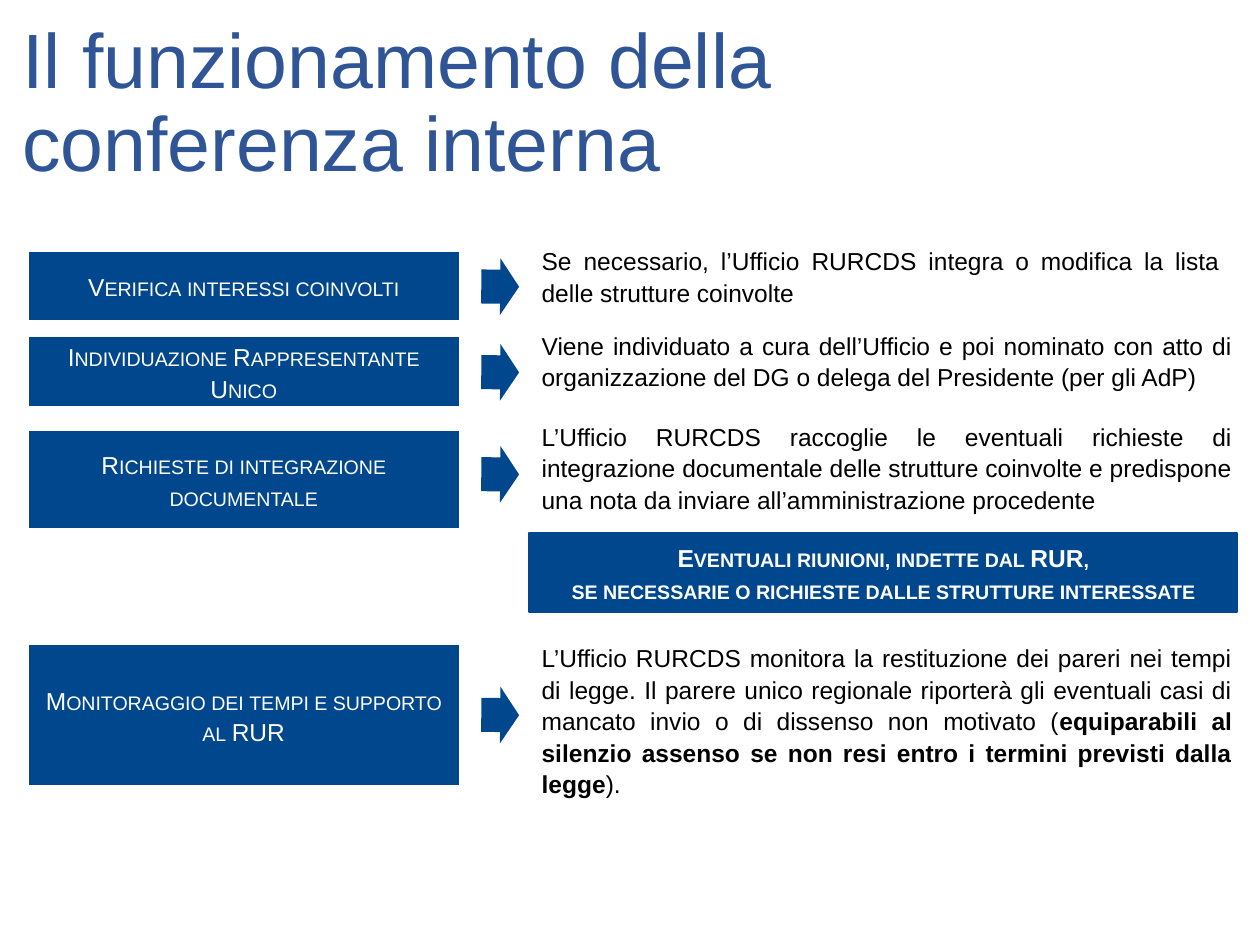
import pptx
import pptx.util
import pptx.dml.color
import pptx.enum.shapes
import pptx.enum.text

Inches = pptx.util.Inches
Pt = pptx.util.Pt
Shape = pptx.enum.shapes.MSO_SHAPE
Align = pptx.enum.text.PP_ALIGN
Anchor = pptx.enum.text.MSO_ANCHOR

BLUE = "01478D"
WHITE = "FFFFFF"
BLACK = "000000"
TITLE_BLUE = "2F5597"

STEPS = [
    ((1.99, 0.56), "Verifica interessi coinvolti", 2.05, (1.89, 0.67, 0.1),
     [("Se necessario, l’Ufficio RURCDS integra o modifica la lista delle strutture coinvolte", False)]),
    ((2.67, 0.56), "Individuazione Rappresentante Unico", 2.73, (2.56, 0.67, 0),
     [("Viene individuato a cura dell’Ufficio e poi nominato con atto di organizzazione "
       "del DG o delega del Presidente (per gli AdP)", False)]),
    ((3.41, 0.79), "Richieste di integrazione documentale", 3.54, (3.28, 0.98, 0),
     [("L’Ufficio RURCDS raccoglie le eventuali richieste di integrazione documentale delle "
       "strutture coinvolte e predispone una nota da inviare all’amministrazione procedente", False)]),
    ((5.11, 1.13), "Monitoraggio dei tempi e supporto al RUR", 5.45, (5.04, 1.65, 0),
     [("L’Ufficio RURCDS monitora la restituzione dei pareri nei tempi di legge. Il parere unico "
       "regionale riporterà gli eventuali casi di mancato invio o di dissenso non motivato (", False),
      ("equiparabili al silenzio assenso se non resi entro i termini previsti dalla legge", True),
      (").", False)]),
]


def color(value):
    return pptx.dml.color.RGBColor.from_string(value)


def set_frame(box, anchor, left, top, right, bottom):
    frame = box.text_frame
    frame.word_wrap = True
    frame.vertical_anchor = anchor
    frame.margin_left, frame.margin_top = Inches(left), Inches(top)
    frame.margin_right, frame.margin_bottom = Inches(right), Inches(bottom)
    return frame.paragraphs[0]


def add_span(para, text, size, fill, bold=False, small_caps=False):
    span = para.add_run()
    span.text = text
    span.font.name = "Arial"
    span.font.size = Pt(size)
    span.font.bold = bold
    span.font.color.rgb = color(fill)
    if small_caps:
        span._r.get_or_add_rPr().set("cap", "small")


def add_lines(para, lines, size, fill, bold=False, small_caps=False):
    for index, line in enumerate(lines):
        if index:
            para.add_line_break()
        add_span(para, line, size, fill, bold, small_caps)


def add_title(page, lines):
    box = page.shapes.add_textbox(Inches(0.08), Inches(0.11), Inches(8.62), Inches(1.45))
    para = set_frame(box, Anchor.MIDDLE, 0.1, 0.05, 0.1, 0.05)
    para.line_spacing = 0.9
    add_lines(para, lines, 44, TITLE_BLUE)


def add_filled(page, kind, left, top, width, height):
    shape = page.shapes.add_shape(kind, Inches(left), Inches(top), Inches(width), Inches(height))
    shape.shadow.inherit = False
    shape.fill.solid()
    shape.fill.fore_color.rgb = color(BLUE)
    return shape


def add_label(page, left, top, width, height, lines, outline, bold=False):
    box = add_filled(page, Shape.RECTANGLE, left, top, width, height)
    box.line.color.rgb = color(outline)
    box.line.width = Pt(1)
    para = set_frame(box, Anchor.MIDDLE, 0.06, 0.06, 0.06, 0.06)
    para.alignment = Align.CENTER
    para.line_spacing = Pt(18)
    add_lines(para, lines, 14, WHITE, bold, True)
    return para


def add_arrow(page, top):
    arrow = add_filled(page, Shape.RIGHT_ARROW, 3.82, top, 0.3, 0.45)
    arrow.line.fill.background()
    arrow.adjustments[0] = 0.6
    arrow.adjustments[1] = 0.5
    arrow.rotation = 0.5


def add_description(page, top, height, right_margin, spans):
    box = page.shapes.add_textbox(Inches(4.2), Inches(top), Inches(5.58), Inches(height))
    para = set_frame(box, Anchor.TOP, 0.1, 0.05, right_margin, 0.05)
    para.alignment = Align.JUSTIFY
    para.line_spacing = Pt(18)
    for text, bold in spans:
        add_span(para, text, 14, BLACK, bold)


def main():
    deck = pptx.Presentation()
    deck.slide_width, deck.slide_height = Inches(10), Inches(7.5)
    page = deck.slides.add_slide(deck.slide_layouts[6])
    add_title(page, ["Il funzionamento della", "conferenza interna"])
    for (top, height), label, arrow_top, place, spans in STEPS:
        add_label(page, 0.22, top, 3.43, height, [label], WHITE)
        add_arrow(page, arrow_top)
        add_description(page, *place, spans)
    banner = add_label(page, 4.2, 4.23, 5.62, 0.63,
                       ["Eventuali riunioni, indette dal RUR,",
                        "se necessarie o richieste dalle strutture interessate"], BLUE, True)
    banner.space_after = Pt(6)
    deck.save("out.pptx")


if __name__ == "__main__":
    main()
